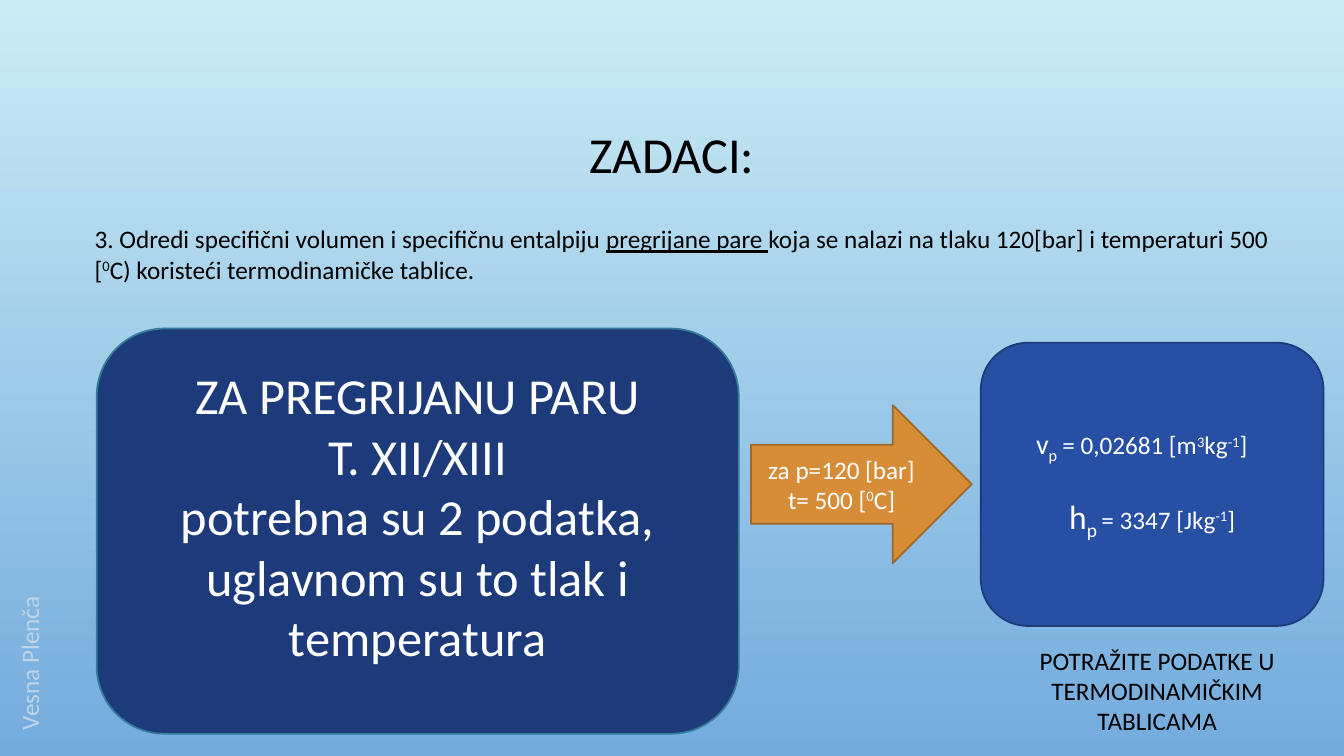
from pptx import Presentation
from pptx.dml.color import RGBColor
from pptx.enum.shapes import MSO_SHAPE
from pptx.enum.text import MSO_ANCHOR, PP_ALIGN
from pptx.util import Pt

BLACK = RGBColor(0x00, 0x00, 0x00)
WHITE = RGBColor(0xFF, 0xFF, 0xFF)
SKY_TOP = RGBColor(0xCB, 0xEC, 0xF5)
SKY_BOTTOM = RGBColor(0x73, 0xAB, 0xDD)
PALE_BLUE = RGBColor(0xC1, 0xD4, 0xE5)
NAVY = RGBColor(0x1D, 0x3B, 0x7B)
TEAL = RGBColor(0x35, 0x7C, 0x9A)
ORANGE = RGBColor(0xD7, 0x8D, 0x38)
BROWN = RGBColor(0x9F, 0x68, 0x29)
BLUE = RGBColor(0x27, 0x4F, 0xA4)
DARK_BLUE = RGBColor(0x1D, 0x3A, 0x79)
SUPER, SUB = 30000, -25000


def write(para, pieces, color, size=18, align=PP_ALIGN.CENTER):
    para.alignment = align
    for text, style in pieces:
        span = para.add_run()
        span.text = text
        span.font.name = "Calibri"
        span.font.size = Pt(style.get("size", size))
        span.font.color.rgb = color
        if "underline" in style:
            span.font.underline = True
        if "baseline" in style:
            span.font._element.set("baseline", str(style["baseline"]))


def write_lines(frame, lines, color, size=18, align=PP_ALIGN.CENTER):
    for index, pieces in enumerate(lines):
        para = frame.add_paragraph() if index else frame.paragraphs[0]
        write(para, pieces, color, size, align)


def add_panel(page, preset, box, fill, line):
    panel = page.shapes.add_shape(preset, *map(Pt, box))
    panel.shadow.inherit = False
    panel.fill.solid()
    panel.fill.fore_color.rgb = fill
    panel.line.color.rgb = line
    panel.line.width = Pt(1.25)
    panel.text_frame.word_wrap = True
    panel.text_frame.vertical_anchor = MSO_ANCHOR.MIDDLE
    return panel


def add_text(page, box, pieces, color, align):
    label = page.shapes.add_textbox(*map(Pt, box))
    label.text_frame.word_wrap = True
    write_lines(label.text_frame, [pieces], color, align=align)
    return label


def paint_background(page):
    fill = page.background.fill
    fill.gradient()
    fill.gradient_angle = 270
    for stop, color in zip(fill.gradient_stops, (SKY_TOP, SKY_BOTTOM)):
        stop.color.rgb = color


def set_title(page, box):
    title = page.shapes.title
    title.left, title.top, title.width, title.height = map(Pt, box)
    title.text_frame.vertical_anchor = MSO_ANCHOR.MIDDLE
    write_lines(title.text_frame, [[("ZADACI:", {})]], BLACK, 36)
    title.text_frame.paragraphs[0].line_spacing = 0.9


def add_author(page, box):
    author = add_text(page, box, [("Vesna Plenča", {})], PALE_BLUE, PP_ALIGN.LEFT)
    author.text_frame._txBody.bodyPr.set("vert", "vert270")


def add_task(page, box):
    pieces = [
        ("3. Odredi specifični volumen i specifičnu entalpiju ", {}),
        ("pregrijane pare ", {"underline": True}),
        ("koja se nalazi na tlaku 120[bar] i temperaturi 500 [", {}),
        ("0", {"baseline": SUPER}),
        ("C) koristeći termodinamičke tablice.", {}),
    ]
    add_text(page, box, pieces, BLACK, PP_ALIGN.LEFT)


def add_method(page, box):
    panel = add_panel(page, MSO_SHAPE.ROUNDED_RECTANGLE, box, NAVY, TEAL)
    panel.text_frame.margin_bottom = Pt(25.6)
    lines = (
        "ZA PREGRIJANU PARU",
        "T. XII/XIII",
        "potrebna su 2 podatka,",
        "uglavnom su to tlak i temperatura",
    )
    write_lines(panel.text_frame, [[(line, {})] for line in lines], WHITE, 36)


def add_conditions(page, box):
    arrow = add_panel(page, MSO_SHAPE.RIGHT_ARROW, box, ORANGE, BROWN)
    lines = [
        [("za p=120 [bar]", {})],
        [("t= 500 [", {}), ("0", {"baseline": SUPER}), ("C]", {})],
    ]
    write_lines(arrow.text_frame, lines, WHITE)


def add_results(page, box):
    panel = add_panel(page, MSO_SHAPE.ROUNDED_RECTANGLE, box, BLUE, DARK_BLUE)
    volume = [
        ("v", {"size": 20}),
        ("p", {"size": 20, "baseline": SUB}),
        (" ", {"size": 16}),
        ("= 0,02681 [m", {}),
        ("3", {"baseline": SUPER}),
        ("kg", {}),
        ("-1", {"baseline": SUPER}),
        ("]", {}),
    ]
    enthalpy = [
        ("h", {"size": 24}),
        ("p ", {"size": 24, "baseline": SUB}),
        ("= 3347 [Jkg", {}),
        ("-1", {"baseline": SUPER}),
        ("]", {}),
    ]
    write_lines(panel.text_frame, [volume, enthalpy], WHITE)
    first, second = panel.text_frame.paragraphs
    first.alignment = PP_ALIGN.LEFT
    first._p.get_or_add_pPr().set("marL", str(Pt(22.5)))
    second.space_before = Pt(22)


def add_hint(page, box):
    hint = "POTRAŽITE PODATKE U TERMODINAMIČKIM TABLICAMA"
    add_text(page, box, [(hint, {})], BLACK, PP_ALIGN.CENTER)


def main():
    deck = Presentation()
    deck.slide_width, deck.slide_height = Pt(960), Pt(540)
    page = deck.slides.add_slide(deck.slide_layouts[5])
    paint_background(page)
    set_title(page, (72, 49, 816, 126))
    add_author(page, (6.5, 378.7, 36, 149.8))
    add_task(page, (60.5, 156.2, 855.4, 138.2))
    add_method(page, (69.1, 234.7, 458.6, 289.4))
    add_conditions(page, (536.4, 289.4, 157.7, 113))
    add_results(page, (700.6, 244.8, 244.8, 202.3))
    add_hint(page, (717.1, 457.2, 218.9, 72.7))
    deck.save("out.pptx")


if __name__ == "__main__":
    main()
